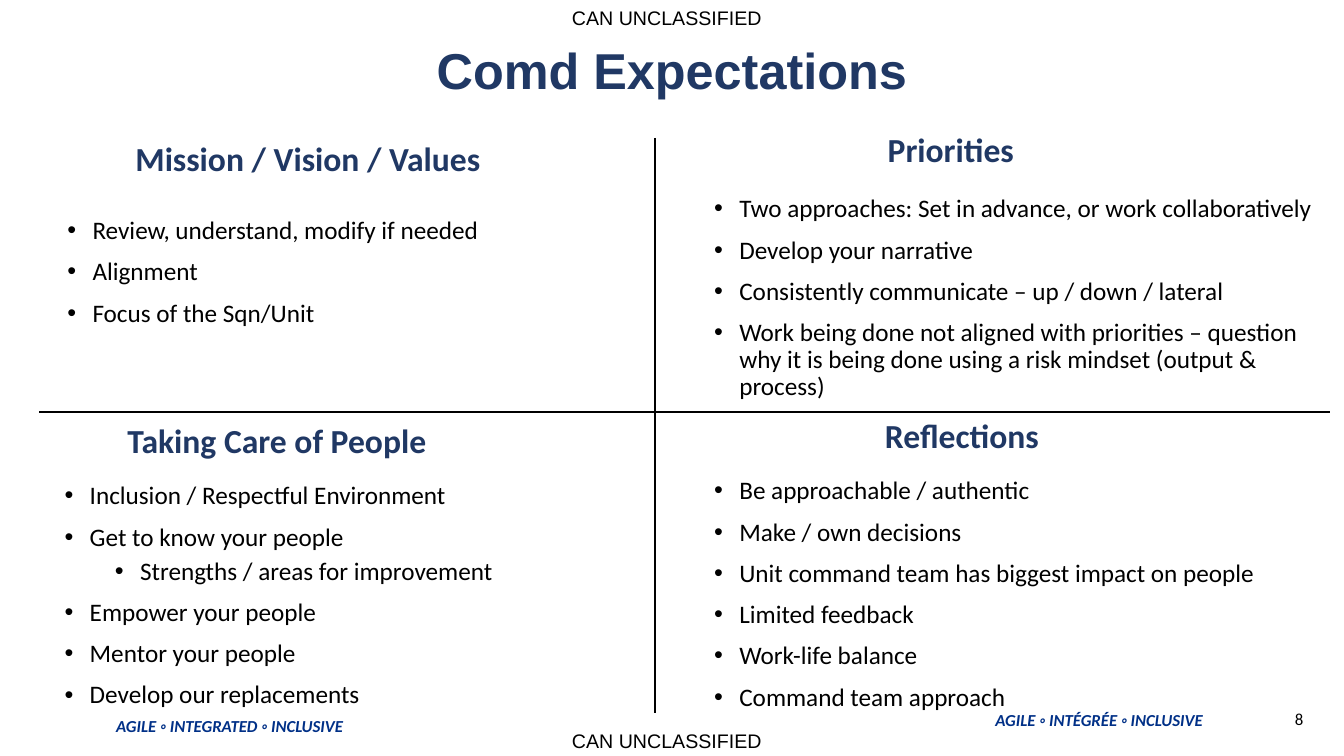
from dataclasses import dataclass

from lxml.etree import SubElement
from pptx import Presentation
from pptx.dml.color import RGBColor
from pptx.enum.shapes import MSO_CONNECTOR
from pptx.enum.text import PP_ALIGN
from pptx.oxml.ns import qn
from pptx.util import Pt

NAVY, BLUE, BLACK = "203864", "003087", "000000"


@dataclass
class Style:
    font: str
    size: float
    colour: str
    bold: bool = False
    italic: bool = False
    spacing: float = 1.0
    inset: tuple[float, float] = (7.2, 3.6)


@dataclass
class Label:
    text: str
    left: float
    top: float
    width: float
    height: float
    style: Style
    align: PP_ALIGN = PP_ALIGN.LEFT


@dataclass
class Bullet:
    text: str
    level: int = 0


@dataclass
class Panel:
    left: float
    top: float
    width: float
    height: float
    bullets: list[Bullet]


@dataclass
class Divider:
    start: tuple[float, float]
    end: tuple[float, float]


TITLE = Style("Arial", 36, NAVY, bold=True, spacing=0.9)
HEADING = Style("Calibri", 24, NAVY, bold=True, spacing=0.9)
BODY = Style("Calibri", 18, BLACK, spacing=0.9)
MARKING = Style("Arial", 14, BLACK, inset=(0, 0))
MOTTO = Style("Calibri", 12, BLUE, bold=True, italic=True, inset=(0, 0))
NUMBER = Style("Calibri", 12, BLACK, inset=(0, 0))

LABELS = [
    # Markings and footer
    Label("CAN UNCLASSIFIED", 408.5, 4.5, 143, 17, MARKING),
    Label("CAN UNCLASSIFIED", 408.5, 520.5, 143, 17, MARKING),
    Label("AGILE ◦ INTEGRATED ◦ INCLUSIVE", 83, 511, 170, 15, MOTTO),
    Label("AGILE ◦ INTÉGRÉE ◦ INCLUSIVE", 711, 507, 160, 15, MOTTO),
    Label("8", 925, 506.5, 15, 15, NUMBER),
    # Title and quadrant headings
    Label("Comd Expectations", 66, 29, 828, 55, TITLE, PP_ALIGN.CENTER),
    Label("Mission / Vision / Values", 0, 98, 440, 25, HEADING, PP_ALIGN.CENTER),
    Label("Priorities", 627, 92, 213, 25, HEADING),
    Label("Taking Care of People", 84, 299.5, 380, 25, HEADING),
    Label("Reflections", 625, 296, 267, 25, HEADING),
]

PANELS = [
    Panel(41, 152, 420, 140, [
        Bullet("Review, understand, modify if needed"),
        Bullet("Alignment"),
        Bullet("Focus of the Sqn/Unit"),
    ]),
    Panel(503, 136.5, 456, 160, [
        Bullet("Two approaches: Set in advance, or work collaboratively"),
        Bullet("Develop your narrative"),
        Bullet("Consistently communicate – up / down / lateral"),
        Bullet("Work being done not aligned with priorities – question why it is "
               "being done using a risk mindset (output & process)"),
    ]),
    Panel(39, 341.5, 420, 184, [
        Bullet("Inclusion / Respectful Environment"),
        Bullet("Get to know your people"),
        Bullet("Strengths / areas for improvement", level=1),
        Bullet("Empower your people"),
        Bullet("Mentor your people"),
        Bullet("Develop our replacements"),
    ]),
    Panel(503, 338, 456, 184, [
        Bullet("Be approachable / authentic"),
        Bullet("Make / own decisions"),
        Bullet("Unit command team has biggest impact on people"),
        Bullet("Limited feedback"),
        Bullet("Work-life balance"),
        Bullet("Command team approach"),
    ]),
]

DIVIDERS = [
    Divider((468, 98.5), (468, 509)),
    Divider((28, 294.5), (950, 294.5)),
]


def colour(value: str) -> RGBColor:
    return RGBColor.from_string(value)


def add_frame(page, area: Label | Panel, style: Style):
    box = page.shapes.add_textbox(
        Pt(area.left), Pt(area.top), Pt(area.width), Pt(area.height))
    frame = box.text_frame
    frame.word_wrap = True
    side, end = style.inset
    frame.margin_left = frame.margin_right = Pt(side)
    frame.margin_top = frame.margin_bottom = Pt(end)
    return frame


def write(para, text: str, style: Style) -> None:
    para.text = text
    para.line_spacing = style.spacing
    font = para.font
    font.name, font.size = style.font, Pt(style.size)
    font.bold, font.italic = style.bold, style.italic
    font.color.rgb = colour(style.colour)


def add_label(page, label: Label) -> None:
    para = add_frame(page, label, label.style).paragraphs[0]
    para.alignment = label.align
    write(para, label.text, label.style)


def add_panel(page, panel: Panel) -> None:
    frame = add_frame(page, panel, BODY)
    for index, bullet in enumerate(panel.bullets):
        para = frame.add_paragraph() if index else frame.paragraphs[0]
        para.level = bullet.level
        if index:
            para.space_before = Pt(5 if bullet.level else 10)
        # Hanging bullet
        properties = para._p.get_or_add_pPr()
        properties.set("marL", str(Pt(18 + 36 * bullet.level)))
        properties.set("indent", str(Pt(-18)))
        SubElement(properties, qn("a:buFont")).set("typeface", "Arial")
        SubElement(properties, qn("a:buChar")).set("char", "•")
        write(para, bullet.text, BODY)


def add_divider(page, divider: Divider) -> None:
    points = [Pt(value) for value in divider.start + divider.end]
    line = page.shapes.add_connector(MSO_CONNECTOR.STRAIGHT, *points)
    line.line.color.rgb = colour(BLACK)
    line.line.width = Pt(1.5)
    SubElement(line._element.spPr, qn("a:effectLst"))


def main() -> None:
    deck = Presentation()
    deck.slide_width, deck.slide_height = Pt(960), Pt(540)
    page = deck.slides.add_slide(deck.slide_layouts[6])
    for label in LABELS:
        add_label(page, label)
    for panel in PANELS:
        add_panel(page, panel)
    for divider in DIVIDERS:
        add_divider(page, divider)
    deck.save("out.pptx")


if __name__ == "__main__":
    main()
